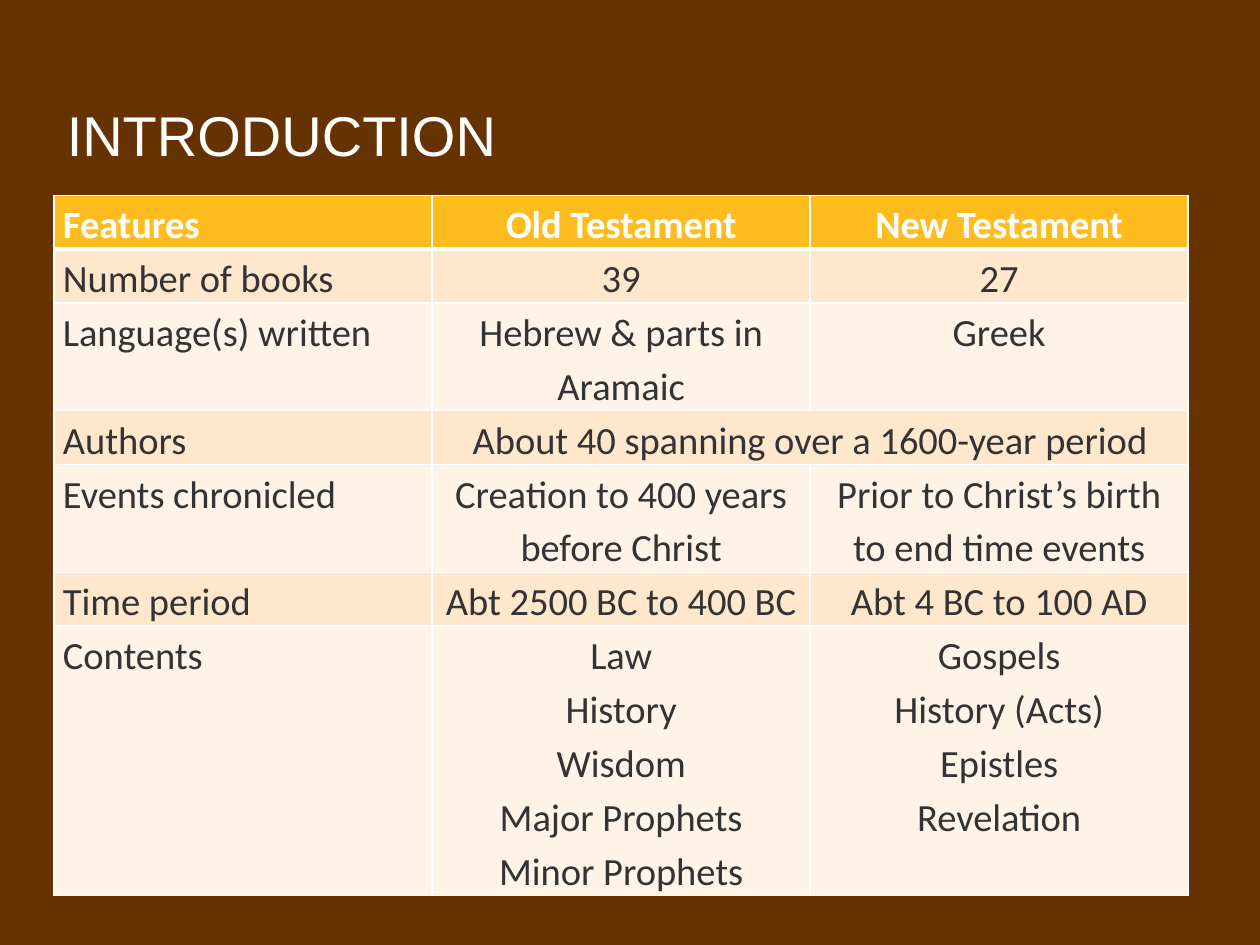
from pptx import Presentation
from pptx.dml.color import RGBColor
from pptx.enum.text import MSO_ANCHOR, PP_ALIGN
from pptx.oxml import parse_xml
from pptx.oxml.ns import nsdecls
from pptx.util import Inches, Pt


def rgb(value):
    return RGBColor.from_string(value)


def add_border(cell, side, width):
    cell._tc.get_or_add_tcPr().append(parse_xml(
        f'<a:{side} {nsdecls("a")} w="{Pt(width)}"><a:solidFill>'
        f'<a:srgbClr val="FFFFFF"/></a:solidFill></a:{side}>'))


ROWS = [
    ("Features", "Old Testament", "New Testament"),
    ("Number of books", "39", "27"),
    ("Language(s) written", "Hebrew & parts in Aramaic", "Greek"),
    ("Authors", "About 40 spanning over a 1600-year period", ""),
    ("Events chronicled", "Creation to 400 years before Christ",
     "Prior to Christ’s birth to end time events"),
    ("Time period", "Abt 2500 BC to 400 BC", "Abt 4 BC to 100 AD"),
    ("Contents", "Law\nHistory\nWisdom\nMajor Prophets\nMinor Prophets",
     "Gospels\nHistory (Acts)\nEpistles\nRevelation"),
]
LINES = [1, 1, 2, 1, 2, 1, 5]
AUTHORS = 3

prs = Presentation()
prs.slide_width, prs.slide_height = Inches(10), Inches(7.5)
left, width = Inches(0.43), Inches(9)
s = prs.slides.add_slide(prs.slide_layouts[5])
s.background.fill.solid()
s.background.fill.fore_color.rgb = rgb("663300")

title = s.shapes.title
title.left, title.top = left, Inches(0.13)
title.width, title.height = width, Inches(1.25)
tf = title.text_frame
tf.text = "INTRODUCTION"
tf.vertical_anchor = MSO_ANCHOR.BOTTOM
p = tf.paragraphs[0]
p.alignment = PP_ALIGN.LEFT
p.font.name, p.font.size = "Arial", Pt(32)
p.font.color.rgb = rgb("FFFFFF")

height = Inches(5.48)
table = s.shapes.add_table(len(ROWS), 3, left, Inches(1.55), width, height).table
for row, lines in zip(table.rows, LINES):
    row.height = height * lines // sum(LINES)
table.cell(AUTHORS, 1).merge(table.cell(AUTHORS, 2))

for i, texts in enumerate(ROWS):
    header = i == 0
    fill = "FFBC1F" if header else ("FFF3E8", "FFE7CD")[i % 2]
    for j, text in enumerate(texts):
        cell = table.cell(i, j)
        add_border(cell, "lnL", 1)
        add_border(cell, "lnR", 1)
        add_border(cell, "lnT", 3 if i == 1 else 1)
        add_border(cell, "lnB", 3 if header else 1)
        cell.fill.solid()
        cell.fill.fore_color.rgb = rgb(fill)
        cell.margin_left = cell.margin_right = Inches(0.07)
        cell.margin_top = cell.margin_bottom = 0
        if cell.is_spanned:
            continue
        cell.text = text
        for p in cell.text_frame.paragraphs:
            p.alignment = PP_ALIGN.CENTER if j else PP_ALIGN.LEFT
            p.line_spacing = 1.15
            p.font.name, p.font.size = "Calibri", Pt(22)
            p.font.bold = header
            p.font.color.rgb = rgb("FFFFFF" if header else "333333")

prs.save("out.pptx")
